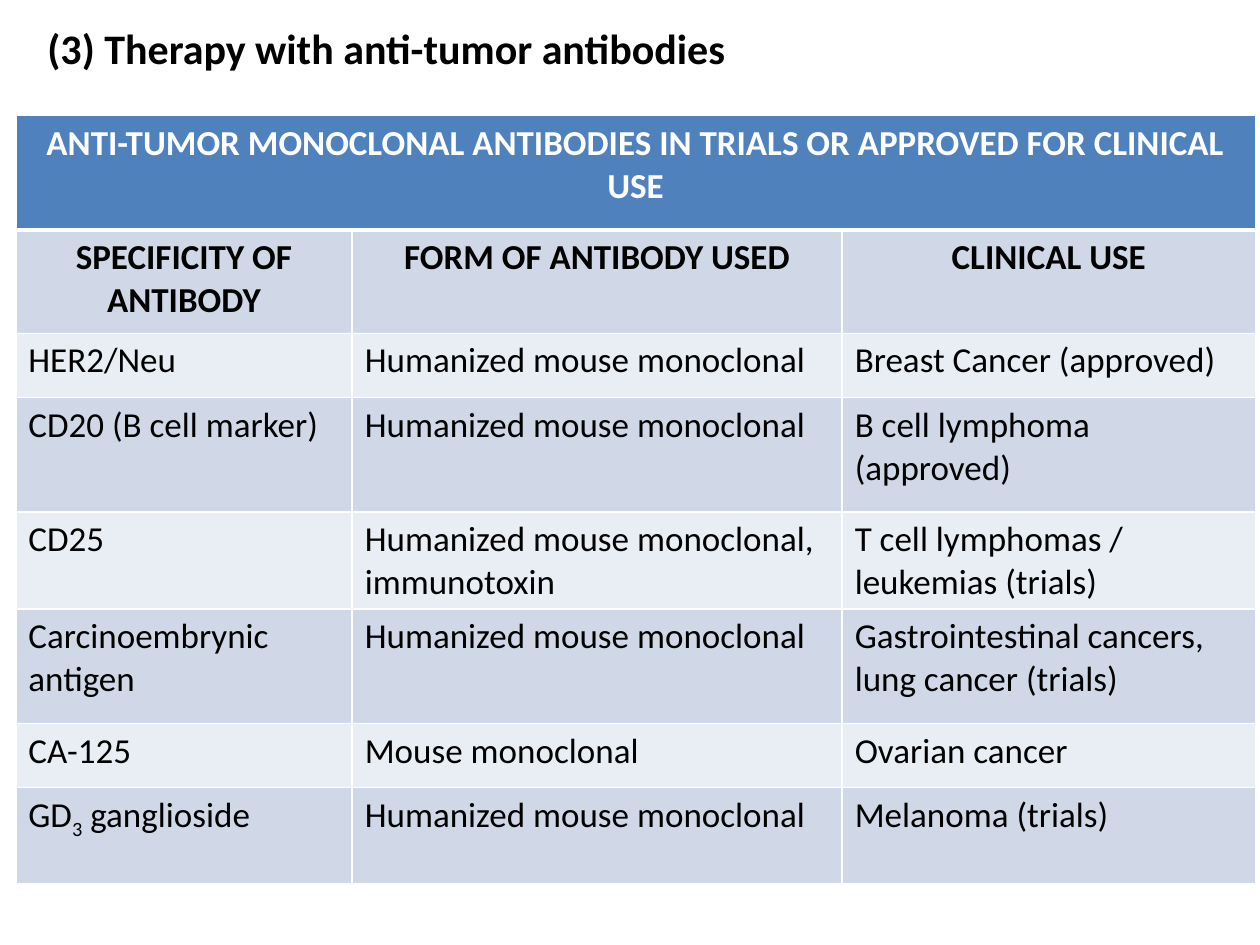
import pptx
import pptx.dml.color
import pptx.enum.text
import pptx.oxml
import pptx.oxml.ns
import pptx.util

Pt = pptx.util.Pt
Color = pptx.dml.color.RGBColor
Align = pptx.enum.text.PP_ALIGN

WHITE = Color(0xFF, 0xFF, 0xFF)
BLACK = Color(0, 0, 0)
BLUE = Color(0x4F, 0x81, 0xBD)
DARK = Color(0xD0, 0xD8, 0xE8)
LIGHT = Color(0xE9, 0xED, 0xF4)

FONT = "Calibri"
MOUSE = "Humanized mouse monoclonal"
BANNER = "ANTI-TUMOR MONOCLONAL ANTIBODIES IN TRIALS OR APPROVED FOR CLINICAL USE"
WIDTHS = [192.25, 280, 236.25]
HEIGHTS = [65.5, 59, 36.75, 65.5, 54.75, 65.5, 36.75, 55]
ROWS = [
    ["SPECIFICITY OF ANTIBODY", "FORM OF ANTIBODY USED", "CLINICAL USE"],
    ["HER2/Neu", MOUSE, "Breast Cancer (approved)"],
    ["CD20 (B cell marker)", MOUSE, "B cell lymphoma (approved)"],
    ["CD25", MOUSE + ", immunotoxin", "T cell lymphomas / leukemias (trials)"],
    ["Carcinoembrynic antigen", MOUSE, "Gastrointestinal cancers, lung cancer (trials)"],
    ["CA-125", "Mouse monoclonal", "Ovarian cancer"],
    [["GD", ("3", -25), " ganglioside"], MOUSE, "Melanoma (trials)"],
]


def add_runs(para, text, size, color, bold):
    """Add a string, or a list of strings and (string, baseline percent) pairs."""
    for part in text if isinstance(text, list) else [text]:
        words, base = part if isinstance(part, tuple) else (part, 0)
        run = para.add_run()
        run.text = words
        font = run.font
        font.name, font.size, font.bold = FONT, Pt(size), bold
        font.color.rgb = color
        if base:
            run._r.get_or_add_rPr().set("baseline", str(base * 1000))


def add_edges(cell, top, low):
    """Draw white borders; top and low are the widths in points."""
    props = cell._tc.get_or_add_tcPr()
    for side, width in (("L", 1), ("R", 1), ("T", top), ("B", low)):
        props.append(pptx.oxml.parse_xml(
            f'<a:ln{side} {pptx.oxml.ns.nsdecls("a")} w="{Pt(width)}">'
            f'<a:solidFill><a:srgbClr val="{WHITE}"/></a:solidFill></a:ln{side}>'))


def fill_cell(cell, text, fill, color=BLACK, head=False, top=1, low=1):
    add_edges(cell, top, low)
    cell.fill.solid()
    cell.fill.fore_color.rgb = fill
    para = cell.text_frame.paragraphs[0]
    para.alignment = Align.CENTER if head else Align.LEFT
    add_runs(para, text, 20, color, head)


def add_title(slide, left, top, width, height):
    box = slide.shapes.add_textbox(Pt(left), Pt(top), Pt(width), Pt(height))
    frame = box.text_frame
    frame.word_wrap = True
    frame.auto_size = pptx.enum.text.MSO_AUTO_SIZE.SHAPE_TO_FIT_TEXT
    add_runs(frame.paragraphs[0], "(3) Therapy with anti-tumor antibodies",
             24, BLACK, True)


def add_grid(slide, left, top):
    grid = slide.shapes.add_table(
        len(HEIGHTS), len(WIDTHS), Pt(left), Pt(top),
        Pt(sum(WIDTHS)), Pt(sum(HEIGHTS))).table
    for col, width in zip(grid.columns, WIDTHS):
        col.width = Pt(width)
    for row, height in zip(grid.rows, HEIGHTS):
        row.height = Pt(height)

    grid.cell(0, 0).merge(grid.cell(0, len(WIDTHS) - 1))
    fill_cell(grid.cell(0, 0), BANNER, BLUE, WHITE, head=True, low=3)
    for r, row in enumerate(ROWS, 1):
        for c, text in enumerate(row):
            fill_cell(grid.cell(r, c), text, DARK if r % 2 else LIGHT,
                      head=r == 1, top=3 if r == 1 else 1)


def main():
    deck = pptx.Presentation()
    deck.slide_width, deck.slide_height = Pt(720), Pt(540)
    slide = deck.slides.add_slide(deck.slide_layouts[6])
    add_title(slide, 20, 9.5, 675, 36)
    add_grid(slide, 9, 66)
    deck.save("out.pptx")


if __name__ == "__main__":
    main()
